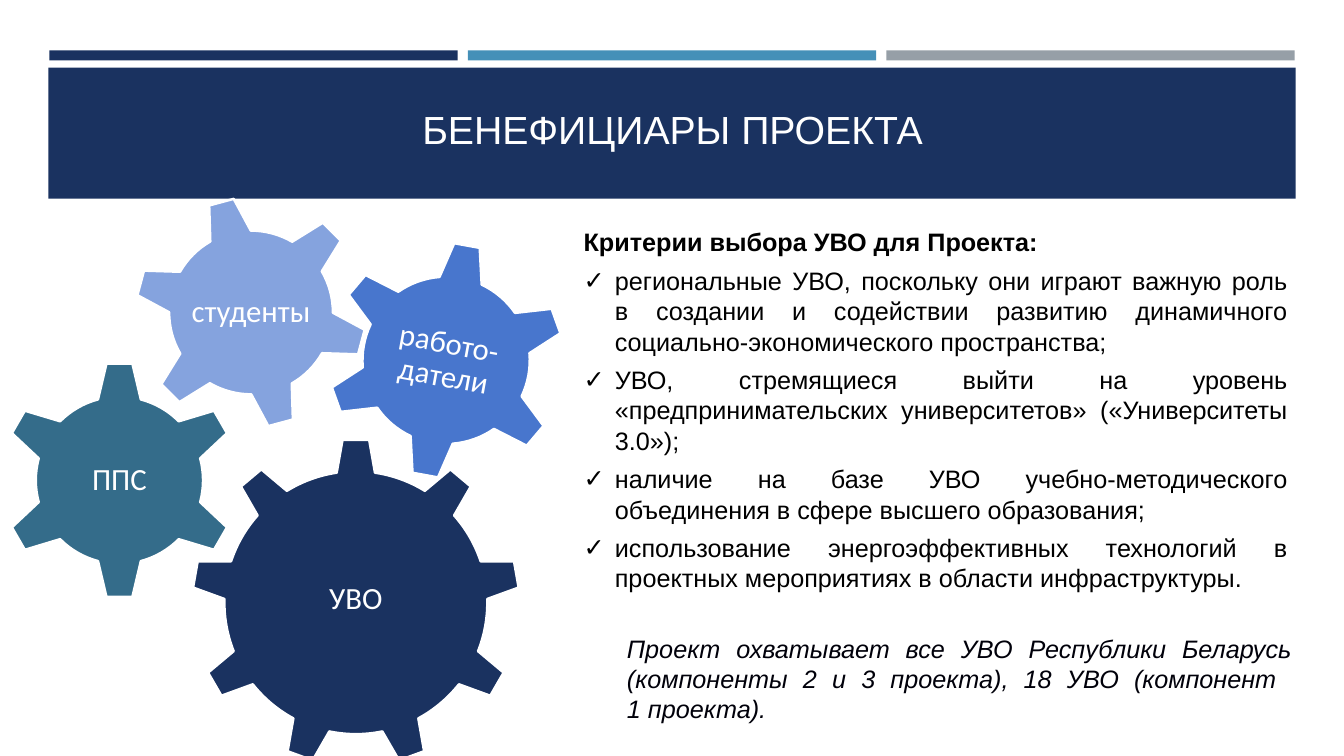
from dataclasses import dataclass

from lxml.etree import SubElement
from pptx import Presentation
from pptx.dml.color import RGBColor
from pptx.enum.shapes import MSO_SHAPE as Shp
from pptx.enum.text import MSO_ANCHOR as Anchor, MSO_AUTO_SIZE as Fit, PP_ALIGN as Align
from pptx.oxml.ns import qn
from pptx.util import Inches, Pt

NAVY, BLUE, GRAY, WHITE = "1A3260", "4590B8", "969FA7", "FFFFFF"


@dataclass
class Gear:
    label: str
    kind: Shp
    left: float
    top: float
    size: float
    color: str
    turn: float = 0
    text_turn: float = 0
    wrap: bool = False


@dataclass
class Style:
    size: float
    color: str
    font: str = "Arial"
    bold: bool = False
    italic: bool = False


GEARS = [
    Gear("УВО", Shp.GEAR_9, 1.9, 4.35, 3.26, NAVY),
    Gear("ППС", Shp.GEAR_6, 0, 3.58, 2.37, "346C8A"),
    Gear("студенты", Shp.GEAR_6, 1.33, 1.94, 2.32, "85A3DE", -15, 15),
    Gear("работо-датели", Shp.GEAR_6, 3.24, 2.39, 2.37, "4876CD", 10.3, wrap=True),
]
CRITERIA = [
    "региональные УВО, поскольку они играют важную роль в создании и содействии "
    "развитию динамичного социально-экономического пространства;",
    "УВО, стремящиеся выйти на уровень «предпринимательских университетов» "
    "(«Университеты 3.0»); ",
    "наличие на базе УВО учебно-методического объединения в сфере высшего образования; ",
    "использование энергоэффективных технологий в проектных мероприятиях "
    "в области инфраструктуры.",
]
SCOPE = [
    "Проект охватывает все УВО Республики Беларусь "
    "(компоненты 2 и 3 проекта), 18 УВО (компонент ",
    "1 проекта).",
]


def rgb(color: str) -> RGBColor:
    return RGBColor.from_string(color)


def add_run(p, text: str, style: Style) -> None:
    r = p.add_run()
    r.text = text
    r.font.name = style.font
    r.font.size = Pt(style.size)
    r.font.bold = style.bold
    r.font.italic = style.italic
    r.font.color.rgb = rgb(style.color)


def add_filled(slide, kind: Shp, left: float, top: float, width: float,
               height: float, color: str):
    sp = slide.shapes.add_shape(kind, Inches(left), Inches(top), Inches(width), Inches(height))
    sp.shadow.inherit = False
    sp.fill.solid()
    sp.fill.fore_color.rgb = rgb(color)
    sp.line.fill.background()
    return sp


def add_text_box(slide, left: float, top: float, width: float, height: float):
    box = slide.shapes.add_textbox(Inches(left), Inches(top), Inches(width), Inches(height))
    box.text_frame.word_wrap = True
    return box.text_frame


def add_header(slide) -> None:
    for i, color in enumerate((NAVY, BLUE, GRAY)):
        add_filled(slide, Shp.RECTANGLE, 0.49 + 4.15 * i, 0.5, 4.05, 0.1, color)
    banner = add_filled(slide, Shp.RECTANGLE, 0.48, 0.67, 12.37, 1.3, NAVY)
    title = slide.shapes.title
    banner.element.addnext(title.element)
    title.left, title.top = Inches(0.64), Inches(0.77)
    title.width, title.height = Inches(12.06), Inches(0.79)
    tf = title.text_frame
    tf.auto_size = Fit.NONE
    tf.vertical_anchor = Anchor.BOTTOM
    p = tf.paragraphs[0]
    p.alignment = Align.CENTER
    add_run(p, "БЕНЕФИЦИАРЫ ПРОЕКТА", Style(28, WHITE))


def add_gear(slide, gear: Gear) -> None:
    sp = add_filled(slide, gear.kind, gear.left, gear.top, gear.size, gear.size, gear.color)
    sp.rotation = gear.turn
    sp.line.color.rgb = rgb(WHITE)
    sp.line.width = Pt(1.75)
    tf = sp.text_frame
    tf.word_wrap = gear.wrap
    tf.vertical_anchor = Anchor.MIDDLE
    tf.margin_left = tf.margin_right = tf.margin_top = tf.margin_bottom = 0
    if gear.text_turn:
        sp.element.txBody.find(qn("a:bodyPr")).set("rot", str(int(gear.text_turn * 60000)))
    p = tf.paragraphs[0]
    p.alignment = Align.CENTER
    p.line_spacing = 0.9
    add_run(p, gear.label, Style(22, WHITE, "Calibri"))


def add_check(p) -> None:
    props = p._p.get_or_add_pPr()
    props.set("marL", str(Inches(0.31)))
    props.set("indent", str(-Inches(0.31)))
    SubElement(props, qn("a:buFont")).set("typeface", "Arial")
    SubElement(props, qn("a:buChar")).set("char", "✓")


def add_criteria(slide) -> None:
    tf = add_text_box(slide, 5.69, 2.2, 7.18, 3.77)
    p = tf.paragraphs[0]
    p.alignment = Align.JUSTIFY
    p.space_after = Pt(6)
    add_run(p, "Критерии выбора УВО для Проекта:", Style(18, "000000", bold=True))
    for text in CRITERIA:
        p = tf.add_paragraph()
        p.alignment = Align.JUSTIFY
        p.space_after = Pt(6)
        add_check(p)
        add_run(p, text, Style(18, "000000"))


def add_scope(slide) -> None:
    p = add_text_box(slide, 6.12, 6.23, 6.79, 1.01).paragraphs[0]
    p.alignment = Align.JUSTIFY
    for i, text in enumerate(SCOPE):
        if i:
            p.add_line_break()
        add_run(p, text, Style(18, "00000A", italic=True))


def main() -> None:
    prs = Presentation()
    prs.slide_width, prs.slide_height = Inches(13.33), Inches(7.5)
    slide = prs.slides.add_slide(prs.slide_layouts[5])
    add_header(slide)
    for gear in GEARS:
        add_gear(slide, gear)
    add_criteria(slide)
    add_scope(slide)
    prs.save("out.pptx")


if __name__ == "__main__":
    main()
